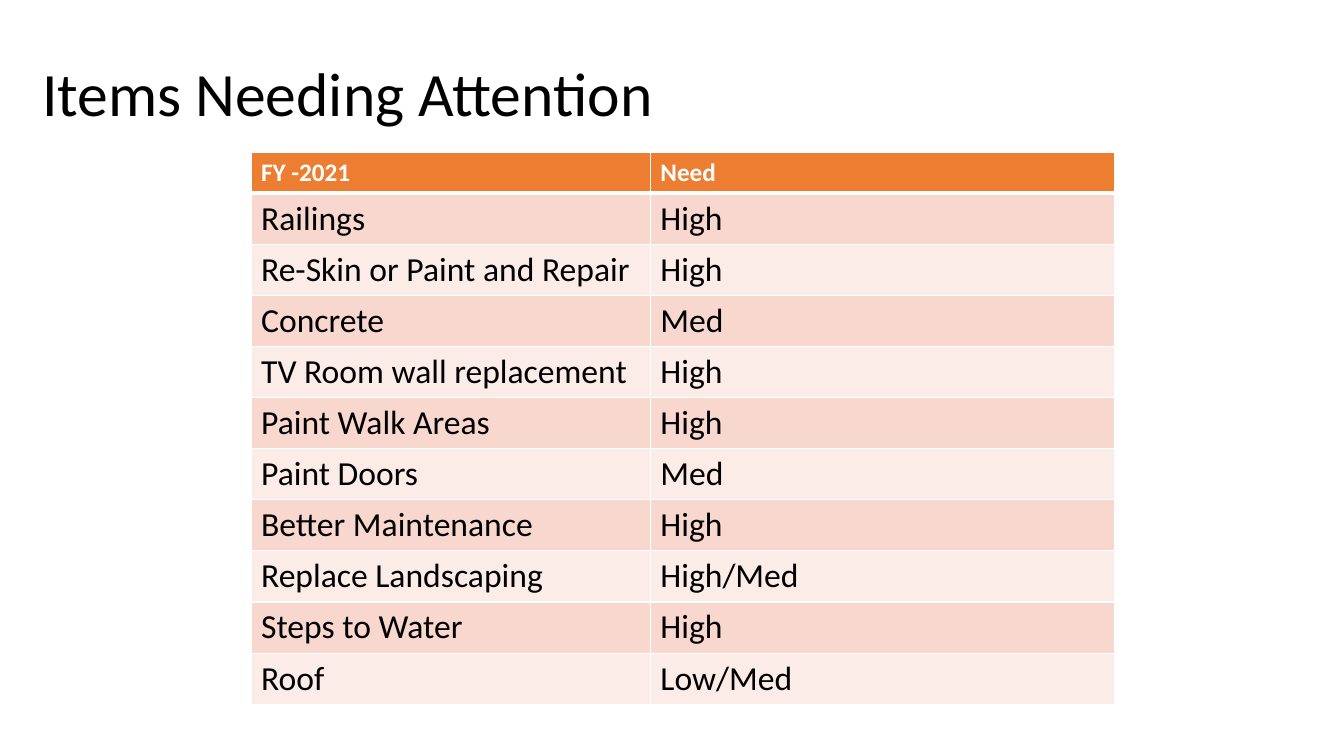
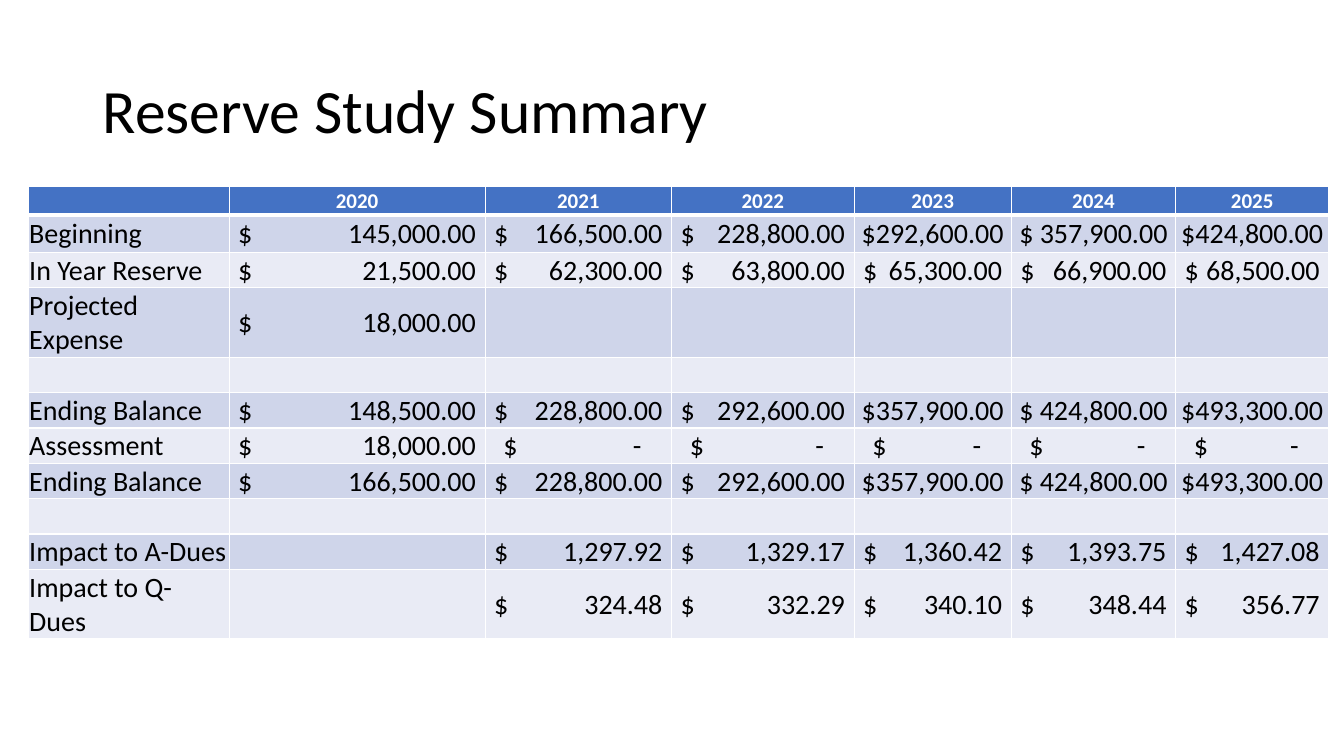
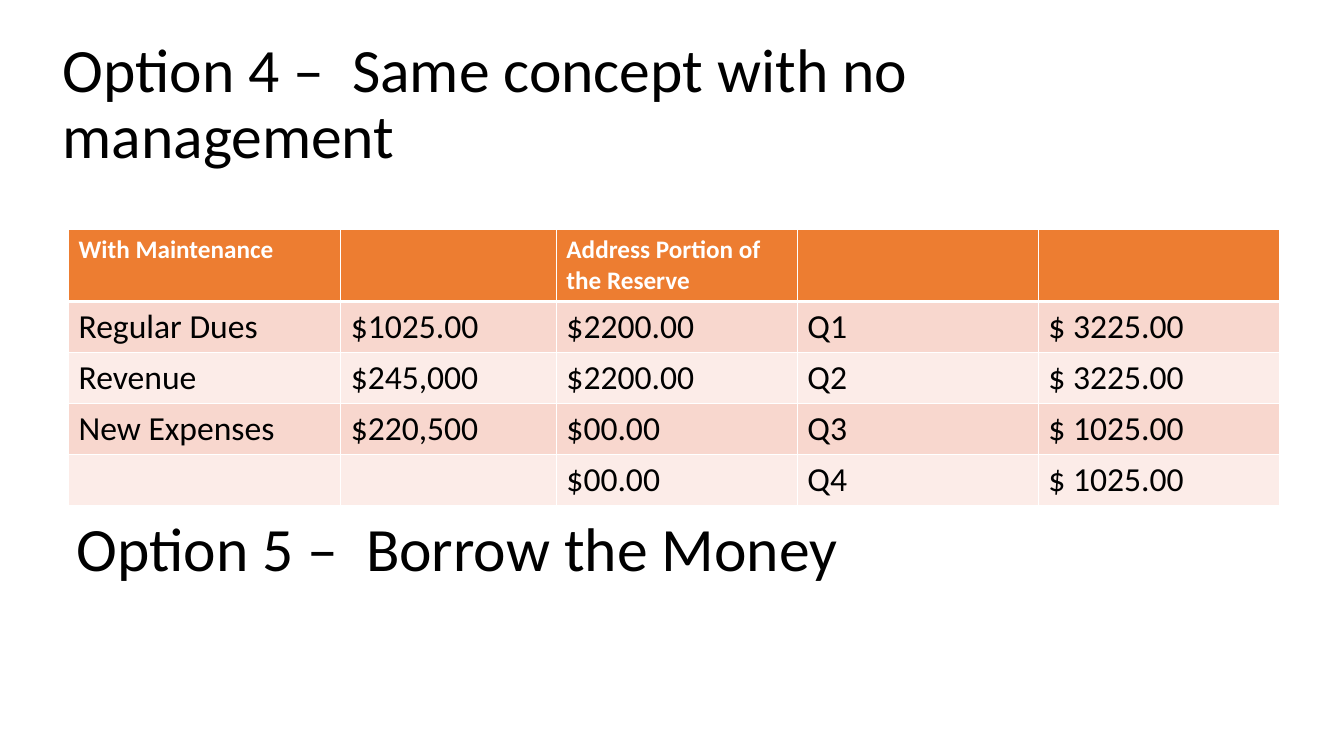
from lxml.etree import SubElement
from pptx import Presentation
from pptx.dml.color import RGBColor
from pptx.enum.text import MSO_ANCHOR as Anchor, MSO_AUTO_SIZE as AutoSize, PP_ALIGN as Align
from pptx.oxml.ns import qn
from pptx.util import Inches, Pt

WIDE, HIGH = 13.33, 7.5
FONT = "Calibri"
BLACK = RGBColor(0x00, 0x00, 0x00)
WHITE = RGBColor(0xFF, 0xFF, 0xFF)
ORANGE = RGBColor(0xED, 0x7D, 0x31)
ORANGE_BAND = RGBColor(0xF8, 0xD7, 0xCE)
ORANGE_PALE = RGBColor(0xFC, 0xEC, 0xE8)
BLUE = RGBColor(0x44, 0x72, 0xC4)
BLUE_BAND = RGBColor(0xCF, 0xD5, 0xEA)
BLUE_PALE = RGBColor(0xE9, 0xEB, 0xF5)

ORANGE_LOOK = {"fills": (ORANGE, ORANGE_BAND, ORANGE_PALE), "head": 18, "body": 24}
BLUE_LOOK = {"fills": (BLUE, BLUE_BAND, BLUE_PALE), "head": 15, "body": 20}
TIGHT = {"margin_left": Inches(0.01), "margin_right": Inches(0.01),
         "margin_top": Inches(0.01), "margin_bottom": 0,
         "vertical_anchor": Anchor.MIDDLE}

TITLE_SIZE = (86.27, 19.33)
ROW = 6.67
NEEDS = [
    ("FY -2021", "Need"),
    ("Railings", "High"),
    ("Re-Skin or Paint and Repair", "High"),
    ("Concrete", "Med"),
    ("TV Room wall replacement", "High"),
    ("Paint Walk Areas", "High"),
    ("Paint Doors", "Med"),
    ("Better Maintenance", "High"),
    ("Replace Landscaping", "High/Med"),
    ("Steps to Water", "High"),
    ("Roof", "Low/Med"),
]
BLANK = ("",) * 7
ENDINGS = ("$\t228,800.00", "$\t292,600.00", "$357,900.00", "$ 424,800.00", "$493,300.00")
RESERVE = [
    ("", "2020", "2021", "2022", "2023", "2024", "2025"),
    ("Beginning", "$\t145,000.00", "$\t166,500.00", "$\t228,800.00",
     "$292,600.00", "$ 357,900.00", "$424,800.00"),
    ("In Year Reserve", "$\t21,500.00", "$\t62,300.00", "$\t63,800.00",
     "$\t65,300.00", "$\t66,900.00", "$\t68,500.00"),
    ("Projected Expense", "$\t18,000.00", "", "", "", "", ""),
    BLANK,
    ("Ending Balance", "$\t148,500.00", *ENDINGS),
    ("Assessment", "$\t18,000.00", *["$\t-"] * 5),
    ("Ending Balance", "$\t166,500.00", *ENDINGS),
    BLANK,
    ("Impact to A-Dues", "", "$\t1,297.92", "$\t1,329.17",
     "$\t1,360.42", "$\t1,393.75", "$\t1,427.08"),
    ("Impact to Q-Dues", "", "$\t324.48", "$\t332.29",
     "$\t340.10", "$\t348.44", "$\t356.77"),
]
OPTION = [
    ("With Maintenance", "", "Address Portion of the Reserve", "", ""),
    ("Regular Dues", "$1025.00", "$2200.00", "Q1", "$ 3225.00"),
    ("Revenue", "$245,000", "$2200.00", "Q2", "$ 3225.00"),
    ("New Expenses", "$220,500", "$00.00", "Q3", "$ 1025.00"),
    ("", "", "$00.00", "Q4", "$ 1025.00"),
]


def across(percent):
    return Inches(WIDE * percent / 100)


def down(percent):
    return Inches(HIGH * percent / 100)


def apply(target, values):
    for name, value in values.items():
        setattr(target, name, value)


def write(para, text, size, color, bold=False):
    if not text:
        SubElement(para._p, qn("a:endParaRPr"), sz=str(size * 100))
        return
    span = para.add_run()
    span.text = text
    apply(span.font, {"name": FONT, "size": Pt(size), "bold": bold})
    span.font.color.rgb = color


def format_heading(box, text, left, top):
    width, height = TITLE_SIZE
    apply(box, {"left": across(left), "top": down(top),
                "width": across(width), "height": down(height)})
    apply(box.text_frame, {"word_wrap": True, "auto_size": AutoSize.NONE,
                           "vertical_anchor": Anchor.MIDDLE})
    para = box.text_frame.paragraphs[0]
    apply(para, {"alignment": Align.LEFT, "line_spacing": 0.9})
    write(para, text, 44, BLACK)


def add_page(deck, title, left, top):
    page = deck.slides.add_slide(deck.slide_layouts[5])
    format_heading(page.shapes.title, title, left, top)
    return page


def set_borders(cell, row):
    widths = {"lnL": 1, "lnR": 1, "lnT": 3 if row == 1 else 1, "lnB": 3 if row == 0 else 1}
    for side, width in widths.items():
        line = SubElement(cell._tc.get_or_add_tcPr(), qn("a:" + side), w=str(Pt(width)))
        fill = SubElement(line, qn("a:solidFill"))
        SubElement(fill, qn("a:srgbClr"), val=str(WHITE))


def set_money(cell, width):
    dash = cell.text_frame.text.endswith("-")
    cell.margin_left = Inches(0.18 if dash else 0.09)
    para = cell.text_frame.paragraphs[0]
    para.alignment = Align.LEFT
    stop = width - cell.margin_left - Inches(0.3 if dash else 0.09)
    tabs = SubElement(para._p.get_or_add_pPr(), qn("a:tabLst"))
    SubElement(tabs, qn("a:tab"), pos=str(stop), algn="r")


def add_grid(page, left, top, columns, heights, rows, look):
    table = page.shapes.add_table(
        len(rows), len(columns), across(left), down(top),
        across(sum(columns)), down(sum(heights))).table
    for column, width in zip(table.columns, columns):
        column.width = across(width)
    for line, height in zip(table.rows, heights):
        line.height = down(height)
    head, band, pale = look["fills"]
    for r, texts in enumerate(rows):
        fill = head if r == 0 else band if r % 2 else pale
        style = (look["head"], WHITE, True) if r == 0 else (look["body"], BLACK)
        for c, text in enumerate(texts):
            cell = table.cell(r, c)
            set_borders(cell, r)
            cell.fill.solid()
            cell.fill.fore_color.rgb = fill
            write(cell.text_frame.paragraphs[0], text, *style)
    return table


def align_amounts(table):
    for line in table.rows:
        for c, cell in enumerate(line.cells):
            apply(cell, TIGHT)
            if "\t" in cell.text_frame.text:
                set_money(cell, table.columns[c].width)
            elif c:
                cell.text_frame.paragraphs[0].alignment = Align.CENTER


def main():
    deck = Presentation()
    apply(deck, {"slide_width": Inches(WIDE), "slide_height": Inches(HIGH)})

    page = add_page(deck, "Items Needing Attention", 2.4, 3.07)
    add_grid(page, 18.68, 20.13, [29.71, 34.51], [5.4] + [ROW] * 10, NEEDS, ORANGE_LOOK)

    page = add_page(deck, "Reserve Study Summary", 6.9, 5.33)
    columns = [14.95, 19.05, 13.88, 13.58, 11.7, 12.23, 11.4]
    heights = [3.73, 5, 4.67, 9.2] + [4.67] * 6 + [9.2]
    align_amounts(add_grid(page, 2.1, 24.67, columns, heights, RESERVE, BLUE_LOOK))

    page = add_page(deck, "Option 4 –  Same concept with no management", 3.9, 4.27)
    add_grid(page, 5.1, 30.4, [20.25, 16.05] + [17.93] * 3, [9.2] + [ROW] * 4,
             OPTION, ORANGE_LOOK)
    box = page.shapes.add_textbox(0, 0, 0, 0)
    format_heading(box, "Option 5 –  Borrow the Money", 4.95, 63.33)

    deck.save("out.pptx")


if __name__ == "__main__":
    main()
